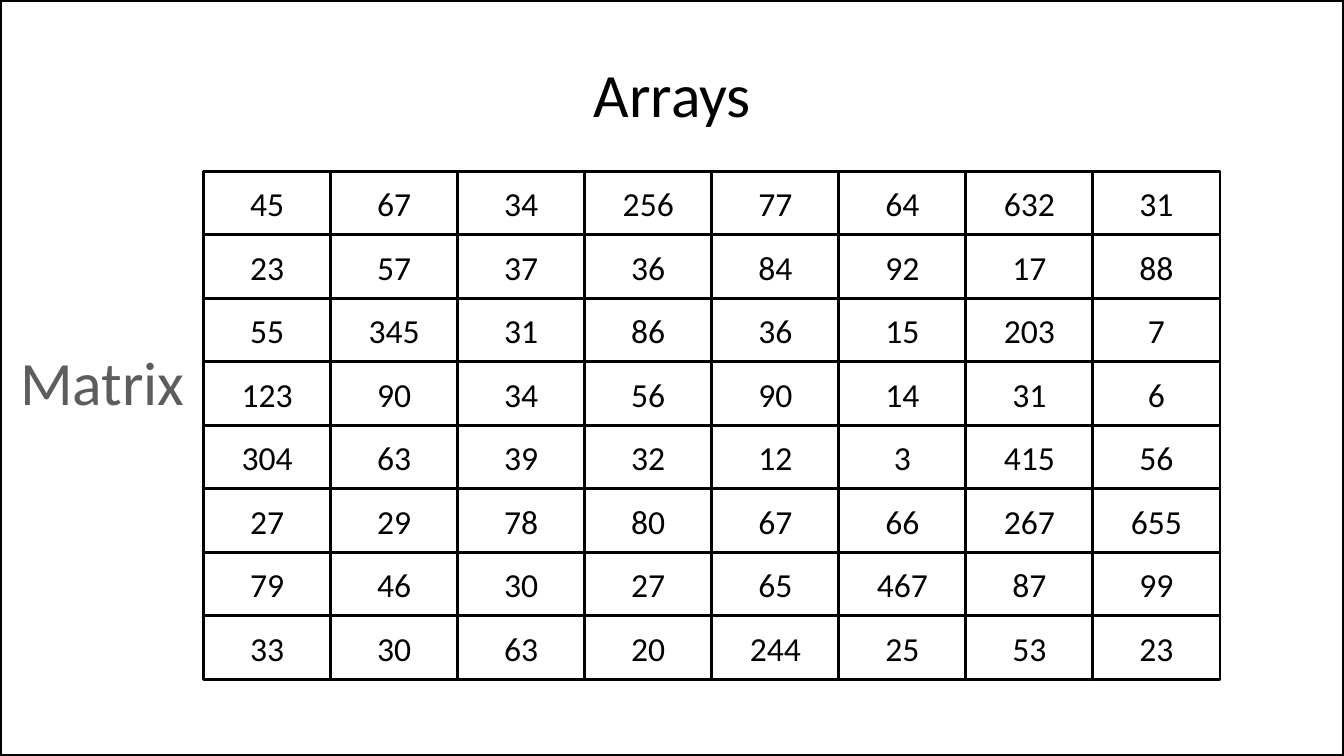
from pptx import Presentation
from pptx import util as u
from pptx.dml.color import RGBColor
from pptx.enum import shapes, text

COLORS = {"ink": "000000", "label": "5D5D5D", "paper": "FFFFFF"}
FONT = "Calibri"
SLIDE_WIDTH, SLIDE_HEIGHT = 13.33, 7.5
MATRIX = [
    [45, 67, 34, 256, 77, 64, 632, 31],
    [23, 57, 37, 36, 84, 92, 17, 88],
    [55, 345, 31, 86, 36, 15, 203, 7],
    [123, 90, 34, 56, 90, 14, 31, 6],
    [304, 63, 39, 32, 12, 3, 415, 56],
    [27, 29, 78, 80, 67, 66, 267, 655],
    [79, 46, 30, 27, 65, 467, 87, 99],
    [33, 30, 63, 20, 244, 25, 53, 23],
]


def color(name):
    return RGBColor.from_string(COLORS[name])


def write(shape, words, size, ink="ink", wrap=True):
    """Centre one line of text in a shape."""
    frame = shape.text_frame
    frame.word_wrap = wrap
    frame.vertical_anchor = text.MSO_ANCHOR.MIDDLE
    paragraph = frame.paragraphs[0]
    paragraph.text = words
    paragraph.alignment = text.PP_ALIGN.CENTER
    paragraph.font.name = FONT
    paragraph.font.size = u.Pt(size)
    paragraph.font.color.rgb = color(ink)


def add_box(slide, left, top, width, height, line_width):
    """Add an unfilled rectangle with a black outline."""
    shape = slide.shapes.add_shape(
        shapes.MSO_SHAPE.RECTANGLE,
        u.Inches(left), u.Inches(top), u.Inches(width), u.Inches(height))
    shape.shadow.inherit = False
    shape.fill.background()
    shape.line.color.rgb = color("ink")
    shape.line.width = u.Pt(line_width)
    return shape


def add_heading(slide, words, left, top, width, height, ink="ink", wrap=True):
    box = slide.shapes.add_textbox(
        u.Inches(left), u.Inches(top), u.Inches(width), u.Inches(height))
    write(box, words, 44, ink, wrap)


def add_matrix(slide, rows, left, top, width, height):
    """Divide the given box into equal cells, one per number."""
    cell_width = width / len(rows[0])
    cell_height = height / len(rows)
    for column, numbers in enumerate(zip(*rows)):
        for row, number in enumerate(numbers):
            cell = add_box(slide, left + column * cell_width,
                           top + row * cell_height, cell_width, cell_height, 2)
            write(cell, str(number), 24)


def main():
    presentation = Presentation()
    presentation.slide_width = u.Inches(SLIDE_WIDTH)
    presentation.slide_height = u.Inches(SLIDE_HEIGHT)
    slide = presentation.slides.add_slide(presentation.slide_layouts[6])
    slide.background.fill.solid()
    slide.background.fill.fore_color.rgb = color("paper")

    # Frame around the slide
    add_box(slide, 0, 0, SLIDE_WIDTH, SLIDE_HEIGHT, 3)

    # Title and side label
    add_heading(slide, "Arrays", 0.67, 0.3, 12, 1.25)
    add_heading(slide, "Matrix", 0.09, 3.36, 1.85, 0.84, "label", wrap=False)

    # Grid of numbers
    add_matrix(slide, MATRIX, 2.02, 1.7, 10.08, 5.04)

    presentation.save("out.pptx")


if __name__ == "__main__":
    main()
